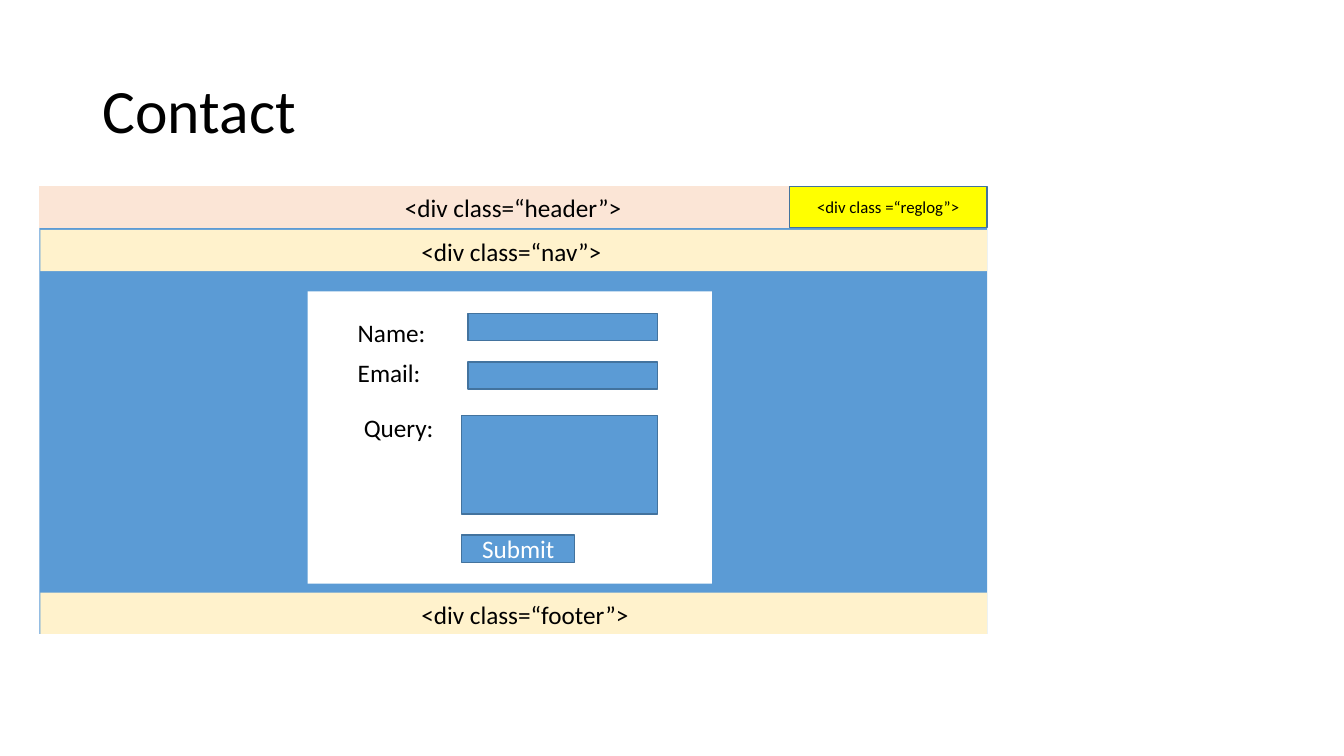
from pptx import Presentation
from pptx.dml.color import RGBColor
from pptx.enum.shapes import MSO_SHAPE
from pptx.enum.text import MSO_ANCHOR, PP_ALIGN
from pptx.util import Inches, Pt

COLORS = {
    "black": "000000", "white": "FFFFFF", "blue": "5B9BD5", "edge": "43739E",
    "peach": "FBE5D6", "yellow": "FFFF00", "cream": "FFF2CC",
}
BAR = 0.41    # height of the header, nav and footer bars
FIELD = 0.27  # height of a one-line field


def color(name):
    return RGBColor.from_string(COLORS[name])


def write(shape, text, size, ink="black", align=PP_ALIGN.LEFT):
    para = shape.text_frame.paragraphs[0]
    para.text = text
    para.alignment = align
    para.font.size = Pt(size)
    para.font.name = "Calibri"
    para.font.color.rgb = color(ink)
    return para


def rect(slide, box, fill, line=None, text="", size=18, ink="black"):
    shape = slide.shapes.add_shape(MSO_SHAPE.RECTANGLE, *map(Inches, box))
    shape.shadow.inherit = False
    shape.fill.solid()
    shape.fill.fore_color.rgb = color(fill)
    if line:
        shape.line.color.rgb = color(line)
        shape.line.width = Pt(1)
    else:
        shape.line.fill.background()
    if text:
        shape.text_frame.vertical_anchor = MSO_ANCHOR.MIDDLE
        write(shape, text, size, ink, PP_ALIGN.CENTER)


def label(slide, box, text, size=18, wrap=True, anchor=MSO_ANCHOR.TOP):
    shape = slide.shapes.add_textbox(*map(Inches, box))
    shape.text_frame.word_wrap = wrap
    shape.text_frame.vertical_anchor = anchor
    return write(shape, text, size)


def title(slide, box):
    para = label(slide, box, "Contact", 44, anchor=MSO_ANCHOR.MIDDLE)
    para.line_spacing = 0.9


def page(slide, box):
    left, top, width, height = box
    rect(slide, (left, top, width, height), "blue")
    # Header with the login box at its right end
    rect(slide, (left, top, width, BAR), "peach", "peach",
         "<div class=“header”>")
    login = 1.96
    rect(slide, (left + width - login, top, login, BAR), "yellow", "edge",
         "<div class =“reglog”>", 12)
    # Navigation and footer bars
    for y, name, wide in ((top + 0.43, "nav", 2.01),
                          (top + height - BAR, "footer", 2.28)):
        rect(slide, (left + 0.01, y, width - 0.01, BAR), "cream")
        label(slide, (left + 3.69, y + 0.02, wide, 0.4),
              f"<div class=“{name}”>", wrap=False)


def form(slide, box):
    left, top, width, height = box
    rect(slide, box, "white")
    # Fields share a right edge
    end = left + 3.47
    for y, wide, tall in ((0.22, 1.88, FIELD), (0.7, 1.88, FIELD),
                          (1.23, 1.94, 0.98)):
        rect(slide, (end - wide, top + y, wide, tall), "blue", "edge")
    # Button
    rect(slide, (end - 1.94, top + 2.42, 1.12, FIELD), "blue", "edge",
         "Submit", ink="white")
    # Field names
    for x, y, text in ((0.4, 0.21, "Name:"), (0.4, 0.61, "Email:"),
                       (0.46, 1.15, "Query:")):
        label(slide, (left + x, top + y, 0.94, 0.4), text)


def main():
    deck = Presentation()
    deck.slide_width, deck.slide_height = Inches(13.33), Inches(7.5)
    slide = deck.slides.add_slide(deck.slide_layouts[6])
    title(slide, (0.92, 0.4, 11.5, 1.45))
    page(slide, (0.39, 1.85, 9.4, 4.44))
    form(slide, (3.05, 2.89, 4.01, 2.9))
    deck.save("out.pptx")


if __name__ == "__main__":
    main()
